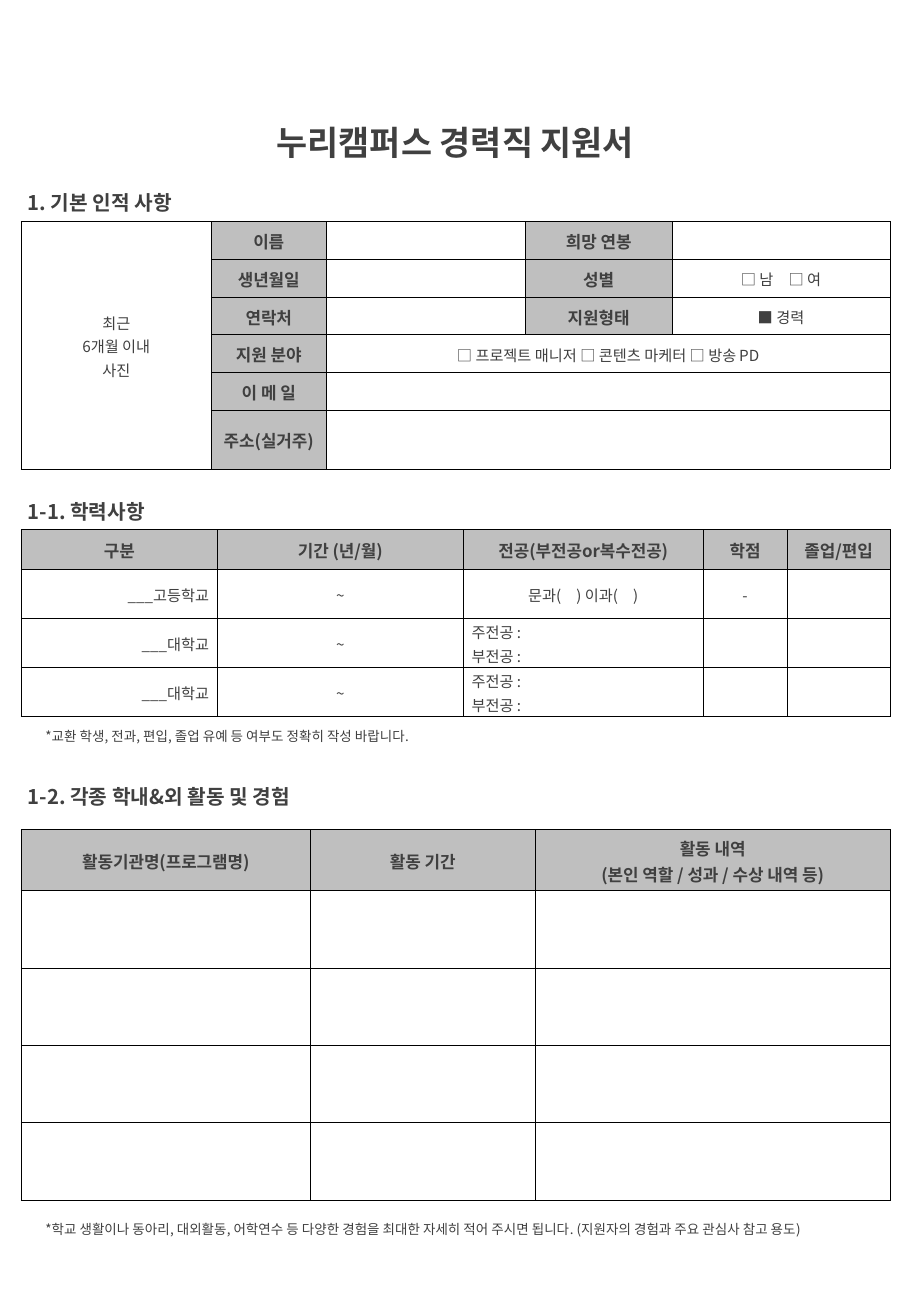
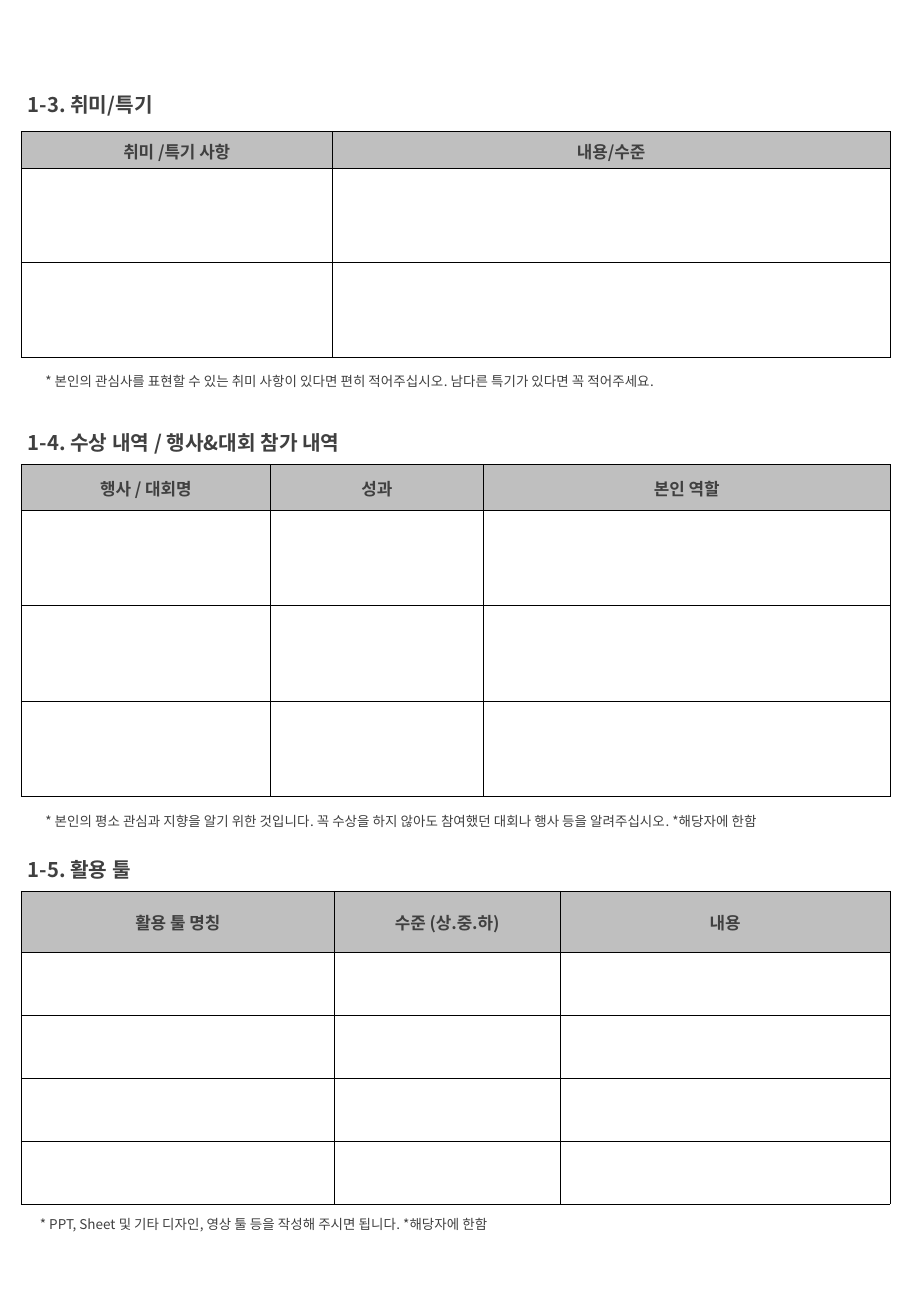
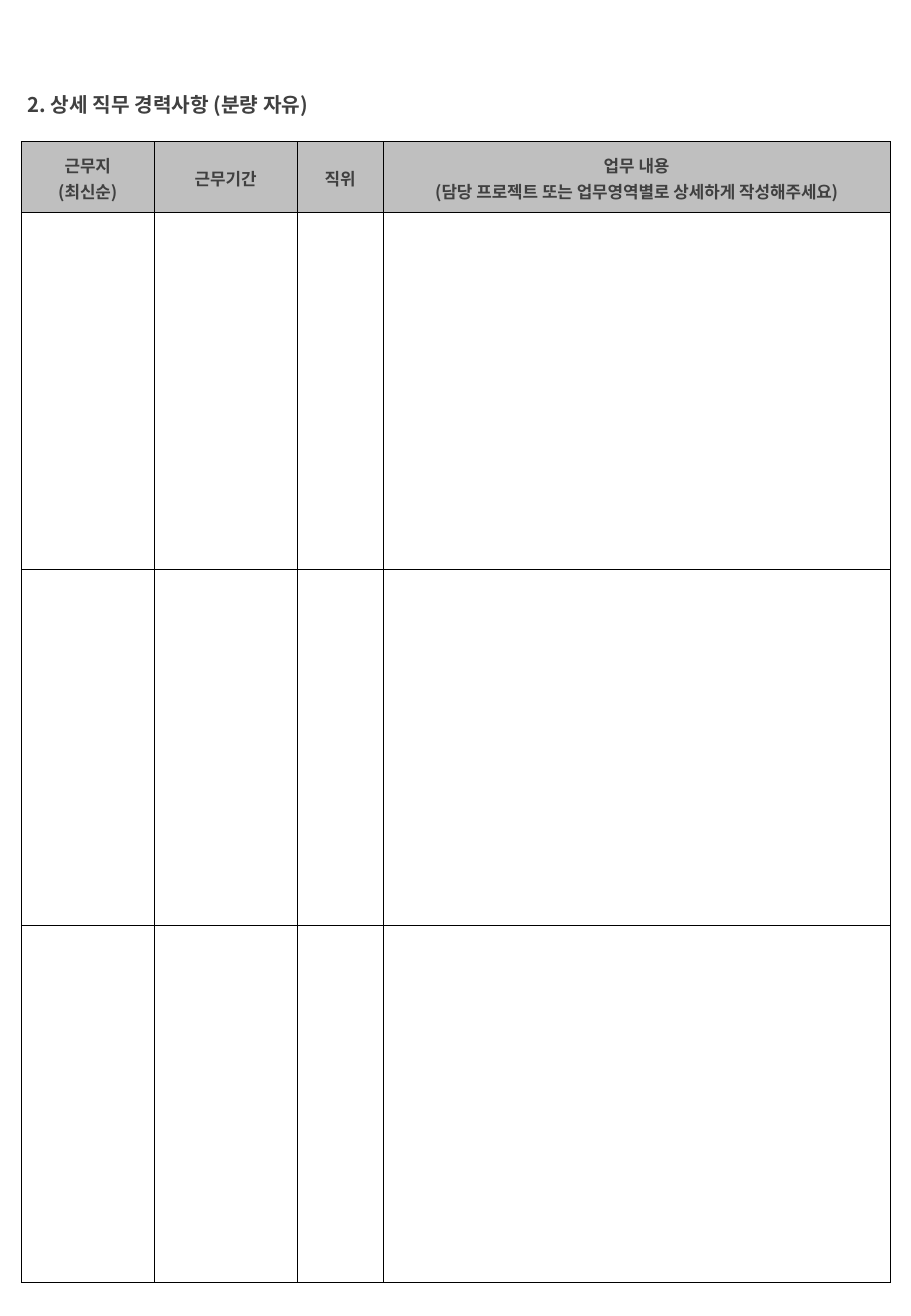
from lxml.etree import SubElement
from pptx import Presentation
from pptx.dml.color import RGBColor as Rgb
from pptx.enum.text import MSO_ANCHOR as Anchor, PP_ALIGN as Align
from pptx.oxml.ns import qn
from pptx.util import Pt

COLORS = {"text": "404040", "label": "BFBFBF", "border": "000000"}
FONT = "Noto Sans CJK KR"
PAGE_WIDTH, PAGE_HEIGHT = 540, 780
TABLE_LEFT, TABLE_WIDTH = 12.6, 515
HEADING_LEFT = 9.4


def write_text(frame, text, size=9, bold=False, align=Align.LEFT,
               spacing=None, indent=0, after=0):
    for index, line in enumerate(text.split("\n")):
        para = frame.paragraphs[0] if index == 0 else frame.add_paragraph()
        para.alignment = align
        para.line_spacing = spacing
        para.space_after = Pt(after)
        if indent:
            para._p.get_or_add_pPr().set("indent", str(Pt(indent)))
        if not line:
            SubElement(para._p, qn("a:endParaRPr"), sz=str(size * 100))
            continue
        span = para.add_run()
        span.text = line
        span.font.size = Pt(size)
        span.font.bold = bold
        span.font.name = FONT
        span.font.color.rgb = Rgb.from_string(COLORS["text"])
        SubElement(span._r.get_or_add_rPr(), qn("a:ea"), typeface=FONT)


def add_text(page, text, left, top, width, height, anchor=Anchor.TOP, **style):
    box = page.shapes.add_textbox(Pt(left), Pt(top), Pt(width), Pt(height))
    frame = box.text_frame
    frame.word_wrap = True
    frame.vertical_anchor = anchor
    write_text(frame, text, **style)


def add_heading(page, text, top):
    add_text(page, text, HEADING_LEFT, top, 460, 21.6, size=12, bold=True)


def add_note(page, text, top, left=TABLE_LEFT, spacing=Pt(12)):
    add_text(page, text, left, top, TABLE_WIDTH, 18,
             size=8, spacing=spacing, indent=7.2, after=8)


def add_borders(cell):
    properties = cell._tc.get_or_add_tcPr()
    for side in ("lnL", "lnR", "lnT", "lnB"):
        line = SubElement(properties, qn(f"a:{side}"), w=str(Pt(0.5)))
        fill = SubElement(line, qn("a:solidFill"))
        SubElement(fill, qn("a:srgbClr"), val=COLORS["border"])


def format_cell(cell, text, is_label, align):
    cell.margin_left = cell.margin_right = Pt(5)
    cell.margin_top = cell.margin_bottom = Pt(0)
    cell.vertical_anchor = Anchor.MIDDLE
    add_borders(cell)
    if is_label:
        cell.fill.solid()
        cell.fill.fore_color.rgb = Rgb.from_string(COLORS["label"])
    else:
        cell.fill.background()
    write_text(cell.text_frame, text, size=10 if is_label else 9,
               bold=is_label, align=align, spacing=1.07)


def add_grid(page, top, widths, heights, labels, entries=None, aligns=None, merges=()):
    entries, aligns = entries or {}, aligns or {}
    widths = [*widths, TABLE_WIDTH - sum(widths)]
    table = page.shapes.add_table(
        len(heights), len(widths), Pt(TABLE_LEFT), Pt(top),
        Pt(TABLE_WIDTH), Pt(sum(heights))).table
    table.first_row = table.horz_banding = False
    for column, width in zip(table.columns, widths):
        column.width = Pt(width)
    for row, height in zip(table.rows, heights):
        row.height = Pt(height)
    for start, end in merges:
        table.cell(*start).merge(table.cell(*end))
    for row in range(len(heights)):
        for column in range(len(widths)):
            place = row, column
            text = labels.get(place) or entries.get(place, "")
            format_cell(table.cell(row, column), text, place in labels,
                        aligns.get(place, Align.CENTER))


def add_list(page, top, widths, header_height, row_height, count, headers, **options):
    labels = {(0, column): text for column, text in enumerate(headers)}
    add_grid(page, top, widths, [header_height] + [row_height] * count, labels, **options)


def add_personal_table(page):
    names = ["이름", "생년월일", "연락처", "지원 분야", "이 메 일", "주소(실거주)"]
    labels = {(row, 1): text for row, text in enumerate(names)}
    labels |= {(row, 3): text for row, text in enumerate(["희망 연봉", "성별", "지원형태"])}
    entries = {
        (0, 0): "최근\n6개월 이내\n사진",
        (1, 4): "□ 남　□ 여",
        (2, 4): "■ 경력",
        (3, 2): "□ 프로젝트 매니저 □ 콘텐츠 마케터 □ 방송 PD",
    }
    merges = [((0, 0), (5, 0))] + [((row, 2), (row, 4)) for row in (3, 4, 5)]
    add_grid(page, 131.3, [112.6, 68.2, 118, 87], [22.4] * 6, labels, entries, merges=merges)


def add_education_table(page):
    entries = {(1, 0): "___고등학교", (1, 2): "문과(　) 이과(　)", (1, 3): "-"}
    aligns = {(row, 0): Align.RIGHT for row in (1, 2, 3)}
    entries |= {(row, 1): "~" for row in (1, 2, 3)}
    for row in (2, 3):
        entries[row, 0] = "___대학교"
        entries[row, 2] = "주전공 :\n부전공 :"
        aligns[row, 2] = Align.LEFT
    add_list(page, 313.8, [116.2, 145.8, 142.2, 49.8], 23.7, 29.1, 3,
             ["구분", "기간 (년/월)", "전공(부전공or복수전공)", "학점", "졸업/편입"],
             entries=entries, aligns=aligns)


def build_profile(page):
    add_text(page, "누리캠퍼스 경력직 지원서", 0, 68.4, PAGE_WIDTH, 31.7,
             anchor=Anchor.MIDDLE, size=20, bold=True, align=Align.CENTER)
    add_heading(page, "1. 기본 인적 사항", 109.4)
    add_personal_table(page)
    add_heading(page, "1-1. 학력사항", 292.3)
    add_education_table(page)
    add_note(page, "*교환 학생, 전과, 편입, 졸업 유예 등 여부도 정확히 작성 바랍니다.", 425.5)
    add_heading(page, "1-2. 각종 학내&외 활동 및 경험", 461.5)
    add_list(page, 491.6, [171.3, 133.3], 36.2, 45.9, 4,
             ["활동기관명(프로그램명)", "활동 기간",
              "활동 내역\n(본인 역할 / 성과 / 수상 내역 등)"])
    add_note(page, "*학교 생활이나 동아리, 대외활동, 어학연수 등 다양한 경험을 최대한 자세히 "
             "적어 주시면 됩니다. (지원자의 경험과 주요 관심사 참고 용도)", 720, spacing=None)


def build_activities(page):
    add_heading(page, "1-3. 취미/특기", 51.1)
    add_list(page, 77.9, [184.3], 21.9, 56, 2, ["취미 /특기 사항", "내용/수준"])
    add_note(page, "* 본인의 관심사를 표현할 수 있는 취미 사항이 있다면 편히 적어주십시오. "
             "남다른 특기가 있다면 꼭 적어주세요.", 215.3)
    add_heading(page, "1-4. 수상 내역 / 행사&대회 참가 내역", 251.3)
    add_list(page, 275.3, [147.6, 126.2], 27.3, 56.5, 3,
             ["행사 / 대회명", "성과", "본인 역할"])
    add_note(page, "* 본인의 평소 관심과 지향을 알기 위한 것입니다. 꼭 수상을 하지 않아도 "
             "참여했던 대회나 행사 등을 알려주십시오. *해당자에 한함", 475.9)
    add_heading(page, "1-5. 활용 툴", 504.7)
    add_list(page, 528.3, [185.5, 133.9], 36.2, 37.3, 4,
             ["활용 툴 명칭", "수준 (상.중.하)", "내용"])
    add_note(page, "* PPT, Sheet 및 기타 디자인, 영상 툴 등을 작성해 주시면 됩니다. "
             "*해당자에 한함", 715, left=HEADING_LEFT)


def build_career(page):
    add_heading(page, "2. 상세 직무 경력사항 (분량 자유)", 51.1)
    add_list(page, 83.9, [78.8, 84.7, 51], 42.1, 211.4, 3,
             ["근무지\n(최신순)", "근무기간", "직위",
              "업무 내용\n(담당 프로젝트 또는 업무영역별로 상세하게 작성해주세요)"])


def main():
    deck = Presentation()
    deck.slide_width, deck.slide_height = Pt(PAGE_WIDTH), Pt(PAGE_HEIGHT)
    for build in (build_profile, build_activities, build_career):
        build(deck.slides.add_slide(deck.slide_layouts[6]))
    deck.save("out.pptx")


if __name__ == "__main__":
    main()
